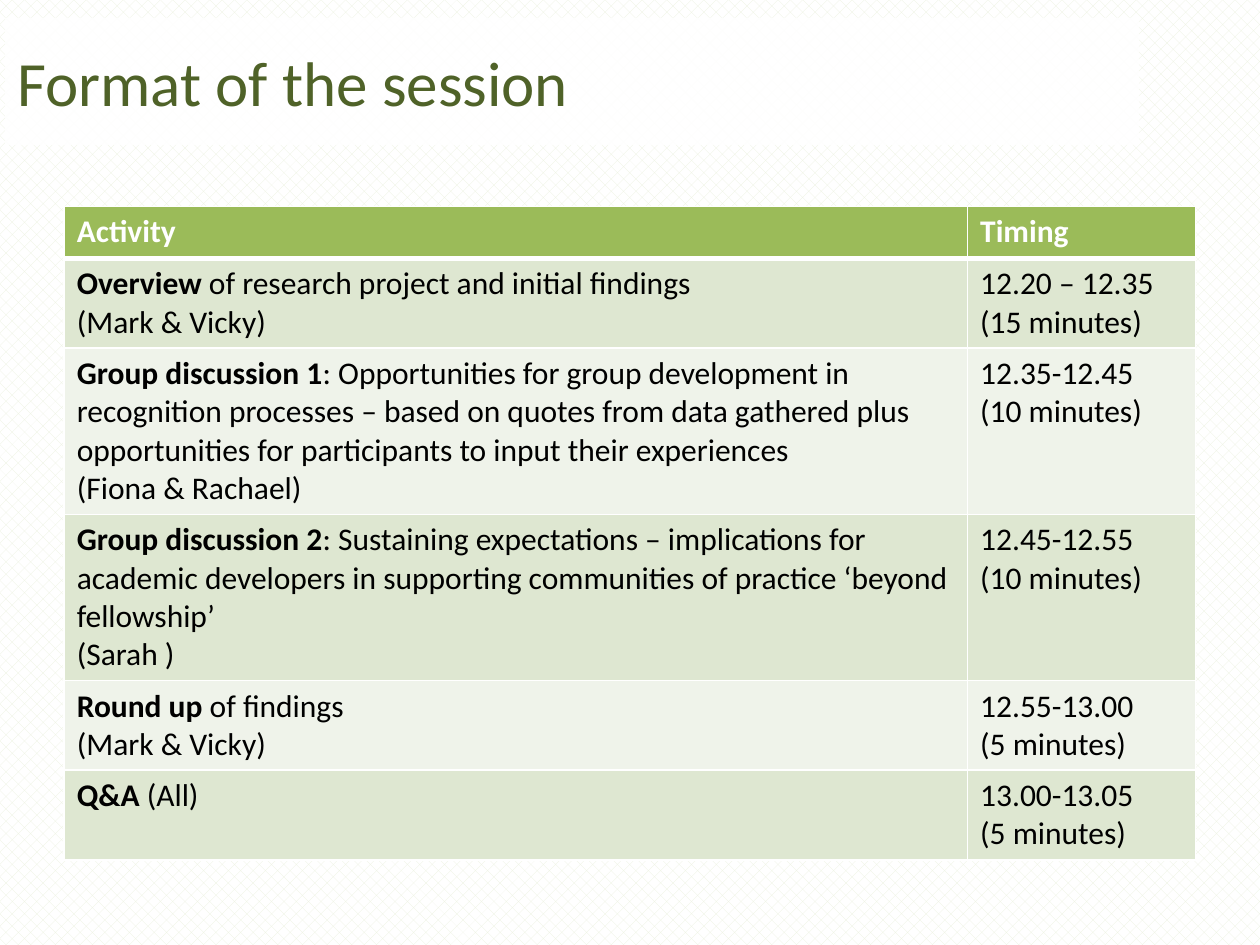
from dataclasses import dataclass

from lxml.etree import SubElement
from pptx import Presentation
from pptx.dml.color import RGBColor
from pptx.enum.dml import MSO_PATTERN
from pptx.enum.shapes import MSO_SHAPE
from pptx.enum.text import MSO_ANCHOR, PP_ALIGN
from pptx.oxml import parse_xml
from pptx.oxml.ns import nsdecls, qn
from pptx.util import Inches, Pt


@dataclass(frozen=True)
class Theme:
    font: str = "Calibri"
    title_size: int = 36
    table_size: int = 18
    white: str = "FFFFFF"
    black: str = "000000"
    title: str = "4F6228"
    pattern: str = "EBF1DE"
    header: str = "9BBB59"
    bands: tuple = ("DEE7D1", "EFF3EA")


THEME = Theme()

COLUMN_WIDTHS = (7.17, 1.81)
HEADER = ("Activity", "Timing")
# Row height, bold lead, rest of the activity, timing;
# "\v" is a line break and "\n" starts a paragraph
SESSIONS = [
    (0.7, "Overview", " of research project and initial findings \v(Mark & Vicky)",
     "12.20 – 12.35\v(15 minutes)"),
    (1.32, "Group discussion 1",
     ": Opportunities for group development in recognition processes – based on "
     "quotes from data gathered plus opportunities for participants to input "
     "their experiences\v(Fiona & Rachael)",
     "12.35-12.45\n(10 minutes)"),
    (1.32, "Group discussion 2",
     ": Sustaining expectations – implications for academic developers in "
     "supporting communities of practice ‘beyond fellowship’ \v(Sarah )",
     "12.45-12.55\v(10 minutes)"),
    (0.7, "Round up ", "of findings\v(Mark & Vicky)", "12.55-13.00\n(5 minutes)"),
    (0.7, "Q&A", " (All)", "13.00-13.05\n(5 minutes)"),
]


def rgb(color):
    return RGBColor.from_string(color)


def write_text(paragraph, text, *, size, color, bold=False):
    """Append text to a paragraph, turning each "\v" into a line break."""
    for number, line in enumerate(text.split("\v")):
        if number:
            paragraph.add_line_break()
        run = paragraph.add_run()
        run.text = line
        run.font.name = THEME.font
        run.font.size = Pt(size)
        run.font.bold = bold
        run.font.color.rgb = rgb(color)


def set_background(slide):
    fill = slide.background.fill
    fill.patterned()
    fill.pattern = MSO_PATTERN.PERCENT_30
    fill.fore_color.rgb = rgb(THEME.pattern)
    fill.back_color.rgb = rgb(THEME.white)


def add_title(slide, text):
    title = slide.shapes.add_shape(
        MSO_SHAPE.RECTANGLE, Inches(0.04), Inches(0.14), Inches(9), Inches(1.01))
    title.shadow.inherit = False
    title.line.fill.background()
    title.fill.solid()
    title.fill.fore_color.rgb = rgb(THEME.white)
    # Let a little of the background through
    white = title.fill._xPr.find(qn("a:solidFill")).find(qn("a:srgbClr"))
    SubElement(white, qn("a:alpha"), val="90000")
    frame = title.text_frame
    frame.word_wrap = True
    frame.vertical_anchor = MSO_ANCHOR.MIDDLE
    frame.paragraphs[0].alignment = PP_ALIGN.LEFT
    write_text(frame.paragraphs[0], text, size=THEME.title_size, color=THEME.title)


def set_borders(cell, top=1, bottom=1):
    widths = {"lnL": 1, "lnR": 1, "lnT": top, "lnB": bottom}
    properties = cell._tc.get_or_add_tcPr()
    for position, (side, width) in enumerate(widths.items()):
        properties.insert(position, parse_xml(
            f'<a:{side} {nsdecls("a")} w="{Pt(width)}"><a:solidFill>'
            f'<a:srgbClr val="{THEME.white}"/></a:solidFill></a:{side}>'))


def fill_cell(cell, text, *, fill, color=THEME.black, lead="", bold=False, **borders):
    cell.fill.solid()
    cell.fill.fore_color.rgb = rgb(fill)
    set_borders(cell, **borders)
    frame = cell.text_frame
    style = {"size": THEME.table_size, "color": color}
    if lead:
        write_text(frame.paragraphs[0], lead, bold=True, **style)
    for number, part in enumerate(text.split("\n")):
        paragraph = frame.add_paragraph() if number else frame.paragraphs[0]
        write_text(paragraph, part, bold=bold, **style)


def add_schedule(slide):
    heights = [0.41] + [session[0] for session in SESSIONS]
    schedule = slide.shapes.add_table(
        len(heights), len(COLUMN_WIDTHS), Inches(0.51), Inches(1.64),
        Inches(sum(COLUMN_WIDTHS)), Inches(sum(heights))).table
    for column, width in zip(schedule.columns, COLUMN_WIDTHS):
        column.width = Inches(width)
    for row, height in zip(schedule.rows, heights):
        row.height = Inches(height)

    # Header row, set off by a thicker rule
    for column, heading in enumerate(HEADER):
        fill_cell(schedule.cell(0, column), heading, fill=THEME.header,
                  color=THEME.white, bold=True, bottom=3)

    # Session rows in alternating bands
    for row, (_, lead, activity, timing) in enumerate(SESSIONS, start=1):
        style = {"fill": THEME.bands[(row - 1) % 2], "top": 3 if row == 1 else 1}
        fill_cell(schedule.cell(row, 0), activity, lead=lead, **style)
        fill_cell(schedule.cell(row, 1), timing, **style)


def main():
    presentation = Presentation()
    presentation.slide_width = Inches(10)
    presentation.slide_height = Inches(7.5)
    slide = presentation.slides.add_slide(presentation.slide_layouts[6])
    set_background(slide)
    add_title(slide, "Format of the session")
    add_schedule(slide)
    presentation.save("out.pptx")


if __name__ == "__main__":
    main()
